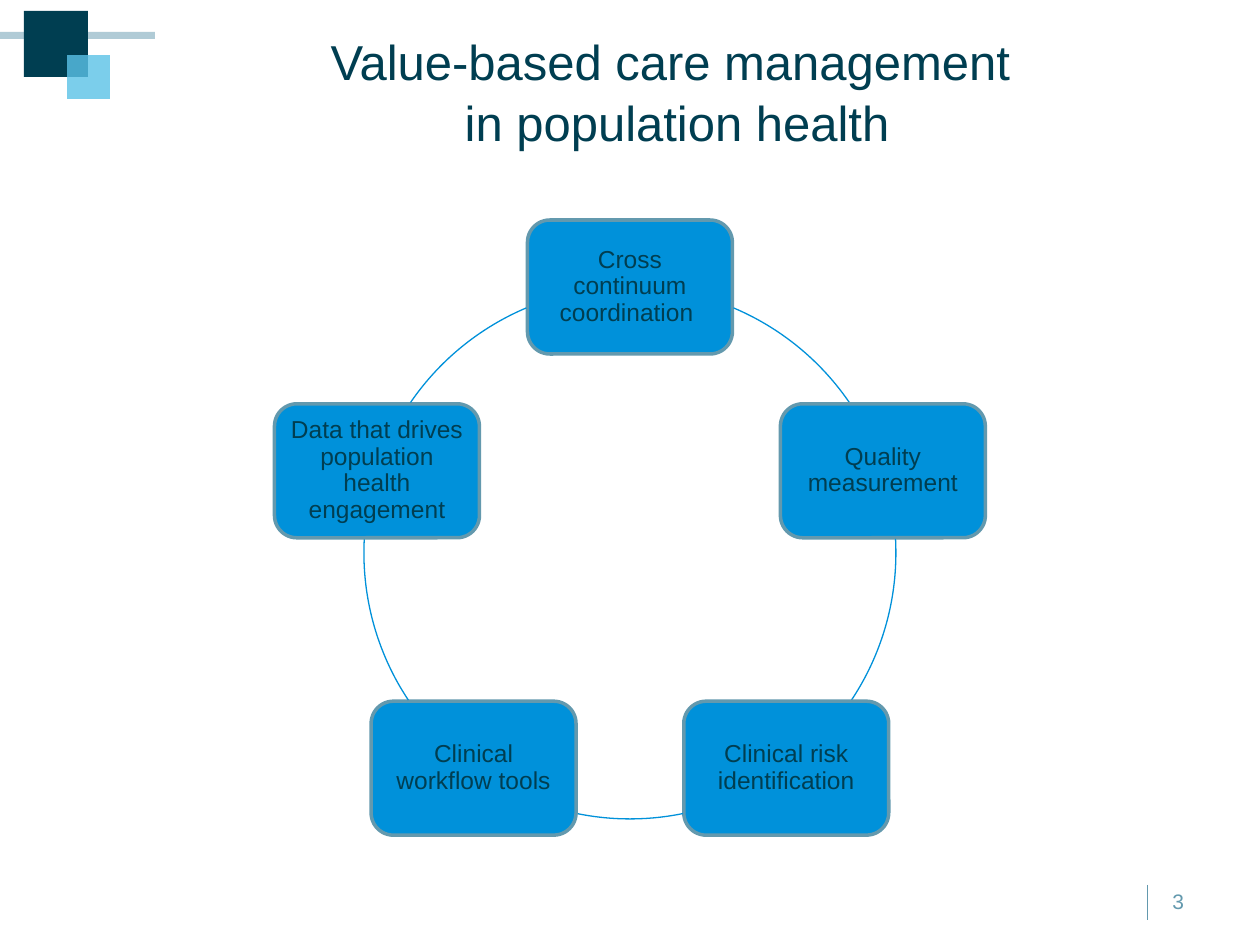
"""Build the slide on value-based care management in population health."""
from math import cos, radians, sin

from lxml.etree import SubElement
from pptx import Presentation
from pptx.dml.color import RGBColor
from pptx.enum.shapes import MSO_CONNECTOR, MSO_SHAPE as SHAPE
from pptx.enum.text import MSO_ANCHOR as ANCHOR, PP_ALIGN as ALIGN
from pptx.oxml.ns import qn
from pptx.util import Pt

PX = 914400 // 126
COLORS = {"navy": "003E51", "steel": "6399AE", "sky": "5BC2E7", "blue": "0091DA"}


def add_box(kind, bounds, fill=None, line=None, width=1):
    shape = slide.shapes.add_shape(kind, *(round(value * PX) for value in bounds))
    shape.shadow.inherit = False
    for name, part in ((fill, shape.fill), (line, shape.line.fill)):
        if name:
            part.solid()
            part.fore_color.rgb = RGBColor.from_string(COLORS[name])
        else:
            part.background()
    if line:
        shape.line.width = Pt(width)
    return shape


def write_text(shape, text, size, color, align, spacing, inset_x, inset_y):
    frame = shape.text_frame
    frame_format = {
        "word_wrap": True, "vertical_anchor": ANCHOR.MIDDLE,
        "margin_left": inset_x * PX, "margin_right": inset_x * PX,
        "margin_top": inset_y * PX, "margin_bottom": inset_y * PX,
    }
    for name, value in frame_format.items():
        setattr(frame, name, value)
    paragraph = frame.paragraphs[0]
    paragraph.text = text
    for name, value in {"alignment": align, "line_spacing": spacing}.items():
        setattr(paragraph, name, value)
    for run in paragraph.runs:
        for name, value in {"name": "Arial", "size": Pt(size)}.items():
            setattr(run.font, name, value)
        run.font.color.rgb = RGBColor.from_string(COLORS[color])


presentation = Presentation()
presentation.slide_width = 1260 * PX
presentation.slide_height = 945 * PX
slide = presentation.slides.add_slide(presentation.slide_layouts[6])

divider = slide.shapes.add_connector(
    MSO_CONNECTOR.STRAIGHT, 1148 * PX, 885 * PX, 1148 * PX, 920 * PX)
divider.line.width = Pt(0.5)
divider.line.color.rgb = RGBColor.from_string(COLORS["steel"])
SubElement(divider._element.spPr, qn("a:effectLst"))

ornaments = [
    ((0, 32, 155, 7), "steel", 50),
    ((24, 11, 64, 66), "navy", 100),
    ((67, 55, 43, 44), "sky", 80),
]
for bounds, color, opacity in ornaments:
    ornament = add_box(SHAPE.RECTANGLE, bounds, color)
    if opacity < 100:
        color_element = ornament._element.spPr.find(qn("a:solidFill"))[0]
        SubElement(color_element, qn("a:alpha"), val=str(opacity * 1000))

labels = [
    ((903, 876, 294, 50), "3", 12, "steel", ALIGN.RIGHT, 1.0),
    ((110, 11, 1134, 158), "Value-based care management \vin population health",
     28, "navy", ALIGN.CENTER, 1.05),
]
for bounds, text, size, color, align, spacing in labels:
    label = slide.shapes.add_textbox(*(value * PX for value in bounds))
    write_text(label, text, size, color, align, spacing, 13, 6)

CENTER_X, CENTER_Y, RADIUS = 630, 553, 266
BOX_WIDTH, BOX_HEIGHT = 205, 134
steps = [
    ("Cross continuum coordination ", 292.9, 325.6),
    ("Quality measurement", 357, 33.6),
    ("Clinical risk identification", 78.5, 101.5),
    ("Clinical workflow tools", 146.4, 183),
    ("Data that drives population health engagement", 214.4, 247.1),
]
ring = (CENTER_X - RADIUS, CENTER_Y - RADIUS, 2 * RADIUS, 2 * RADIUS)
for index, (text, arc_start, arc_end) in enumerate(steps):
    angle = radians(index * 360 / len(steps) - 90)
    left = CENTER_X + RADIUS * cos(angle) - BOX_WIDTH / 2
    top = CENTER_Y + RADIUS * sin(angle) - BOX_HEIGHT / 2
    box = add_box(SHAPE.ROUNDED_RECTANGLE, (left, top, BOX_WIDTH, BOX_HEIGHT),
                  "blue", "steel", 2)
    write_text(box, text, 14, "navy", ALIGN.CENTER, 0.9, 7, 7)
    arc = add_box(SHAPE.ARC, ring, line="blue", width=0.75)
    for position, degrees in enumerate((arc_start, arc_end)):
        arc.adjustments[position] = degrees * 0.6

presentation.save("out.pptx")
